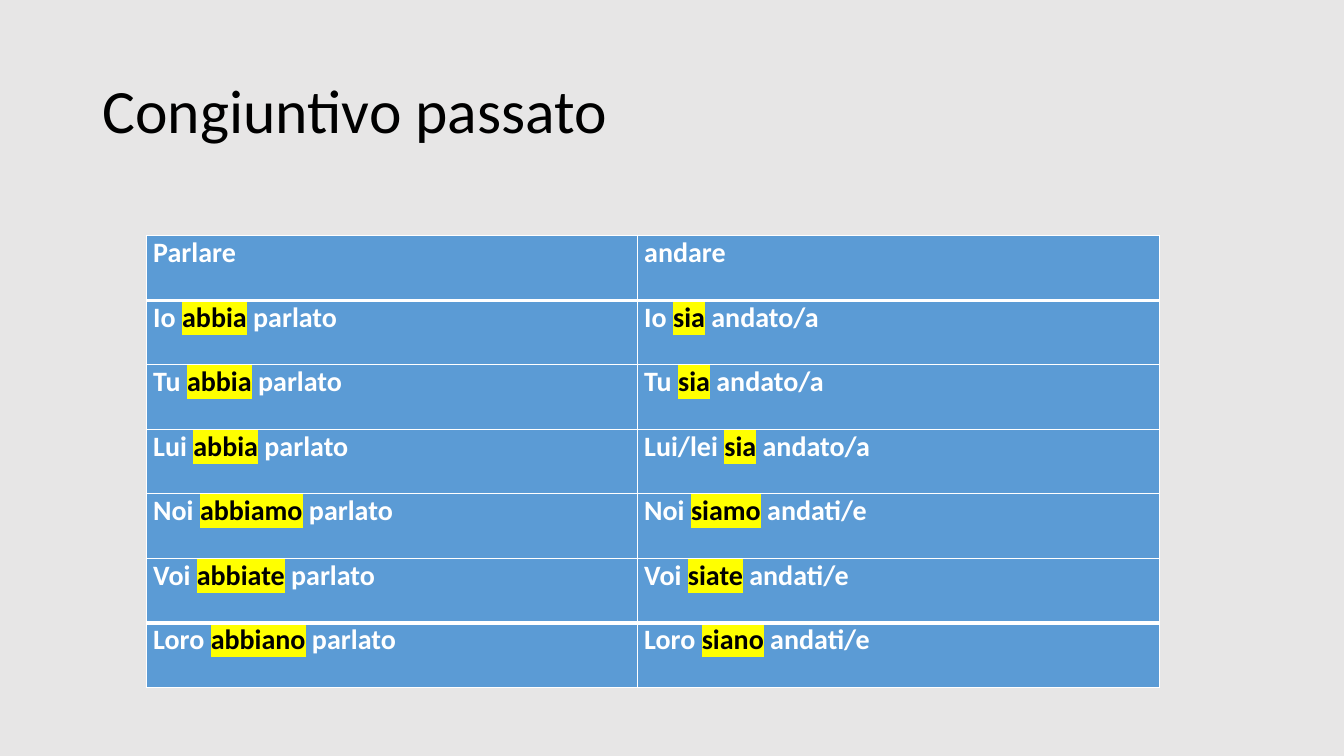
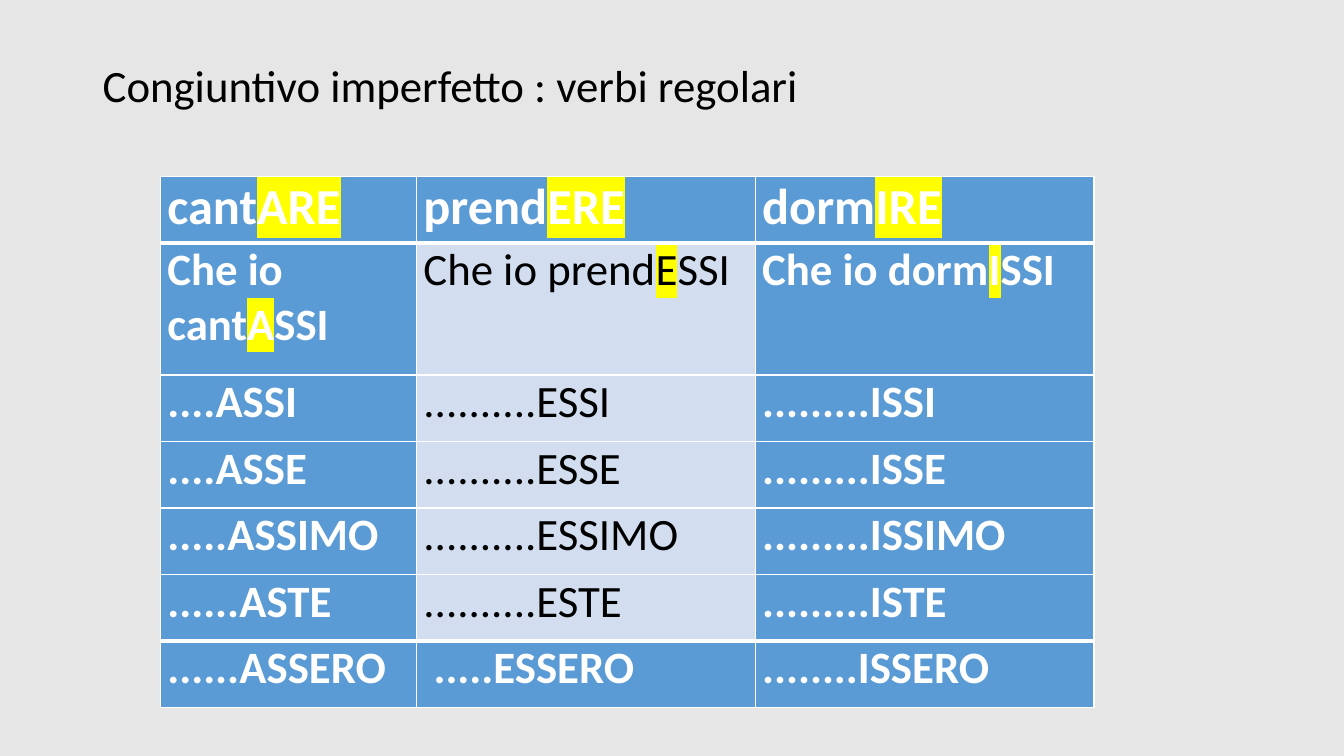
from pptx import Presentation
from pptx.dml.color import RGBColor
from pptx.enum.text import MSO_ANCHOR
from pptx.oxml import parse_xml
from pptx.oxml.ns import nsdecls, qn
from pptx.util import Inches, Pt

# Shared style
FONT = "Calibri"
BACKGROUND = RGBColor(0xE7, 0xE6, 0xE6)
BLUE = RGBColor(0x5B, 0x9B, 0xD5)
PALE = RGBColor(0xD2, 0xDE, 0xEF)
WHITE = RGBColor(0xFF, 0xFF, 0xFF)
BLACK = RGBColor(0, 0, 0)
YELLOW = RGBColor(0xFF, 0xFF, 0)
MIDDLE = MSO_ANCHOR.MIDDLE
THIN, THICK = 1, 3

# Content: *asterisks* enclose the highlighted part of a cell
PASSATO = [
    ("Parlare", "andare"),
    ("Io *abbia* parlato", "Io *sia* andato/a"),
    ("Tu *abbia* parlato", "Tu *sia* andato/a"),
    ("Lui *abbia* parlato", "Lui/lei *sia* andato/a"),
    ("Noi *abbiamo* parlato", "Noi *siamo* andati/e"),
    ("Voi *abbiate* parlato", "Voi *siate* andati/e"),
    ("Loro *abbiano* parlato", "Loro *siano* andati/e"),
]
IMPERFETTO = [
    ("cant*ARE*", "prend*ERE*", "dorm*IRE*"),
    ("Che io cant*A*SSI", "Che io prend*E*SSI", "Che io dorm*I*SSI"),
    ("....ASSI", "..........ESSI", ".........ISSI"),
    ("....ASSE", "..........ESSE", ".........ISSE"),
    (".....ASSIMO", "..........ESSIMO", ".........ISSIMO"),
    ("......ASTE", "..........ESTE", ".........ISTE"),
    ("......ASSERO", " .....ESSERO", "........ISSERO"),
]
SLIDES = [
    dict(title="Congiuntivo passato", title_size=44, title_height=1.45,
         rows=PASSATO, left=1.45, top=2.34, widths=[4.87, 5.18],
         heights=[0.64] * 7, head_size=20, body_size=20,
         marked_color=BLACK, pale_column=None),
    dict(title="Congiuntivo imperfetto : verbi regolari", title_size=32,
         title_height=0.94, rows=IMPERFETTO, left=1.59, top=1.75,
         widths=[2.54, 3.36, 3.36], heights=[0.66, 1.31] + [0.66] * 5,
         head_size=36, body_size=32, marked_color=None, pale_column=1),
]


def write(tf, text, size, color=BLACK, bold=False, marked_color=None):
    """Write one paragraph, highlighting the parts between asterisks."""
    p = tf.paragraphs[0]
    for i, part in enumerate(text.split("*")):
        if not part:
            continue
        marked = i % 2 == 1
        r = p.add_run()
        r.text = part
        r.font.size, r.font.bold, r.font.name = Pt(size), bold, FONT
        r.font.color.rgb = marked_color if marked and marked_color else color
        if marked:
            fill = r.font.fill._xPr.find(qn("a:solidFill"))
            fill.addnext(parse_xml(
                f'<a:highlight {nsdecls("a")}><a:srgbClr val="{YELLOW}"/>'
                '</a:highlight>'))
    return p


def set_borders(cell, top, bottom):
    widths = {"lnL": THIN, "lnR": THIN, "lnT": top, "lnB": bottom}
    for i, (side, width) in enumerate(widths.items()):
        cell._tc.get_or_add_tcPr().insert(i, parse_xml(
            f'<a:{side} {nsdecls("a")} w="{Pt(width)}"><a:solidFill>'
            f'<a:srgbClr val="{WHITE}"/></a:solidFill></a:{side}>'))


def add_title(s, text, size, height):
    tf = s.shapes.add_textbox(Inches(0.92), Inches(0.4), Inches(11.5),
                              Inches(height)).text_frame
    tf.word_wrap = True
    tf.vertical_anchor = MIDDLE
    write(tf, text, size).line_spacing = 0.9


def add_verb_table(s, d):
    rows, widths, heights = d["rows"], d["widths"], d["heights"]
    table = s.shapes.add_table(
        len(rows), len(widths), Inches(d["left"]), Inches(d["top"]),
        Inches(sum(widths)), Inches(sum(heights))).table
    table.first_row = table.horz_banding = False
    for column, width in zip(table.columns, widths):
        column.width = Inches(width)
    for row, height in zip(table.rows, heights):
        row.height = Inches(height)

    # Thick rules lie below the first row and above the last one
    last = len(rows) - 1
    for i, texts in enumerate(rows):
        for j, text in enumerate(texts):
            cell = table.cell(i, j)
            pale = j == d["pale_column"] and 0 < i < last
            cell.margin_left = cell.margin_right = Inches(0.07)
            cell.margin_top = cell.margin_bottom = 0
            cell.fill.solid()
            cell.fill.fore_color.rgb = PALE if pale else BLUE
            set_borders(cell, THICK if i in (1, last) else THIN,
                        THICK if i in (0, last - 1) else THIN)
            write(cell.text_frame, text,
                  d["body_size"] if i else d["head_size"],
                  color=BLACK if pale else WHITE, bold=not pale,
                  marked_color=d["marked_color"])


def main():
    prs = Presentation()
    prs.slide_width, prs.slide_height = Inches(13.33), Inches(7.5)
    for d in SLIDES:
        s = prs.slides.add_slide(prs.slide_layouts[6])
        s.background.fill.solid()
        s.background.fill.fore_color.rgb = BACKGROUND
        add_title(s, d["title"], d["title_size"], d["title_height"])
        add_verb_table(s, d)
    prs.save("out.pptx")


if __name__ == "__main__":
    main()
